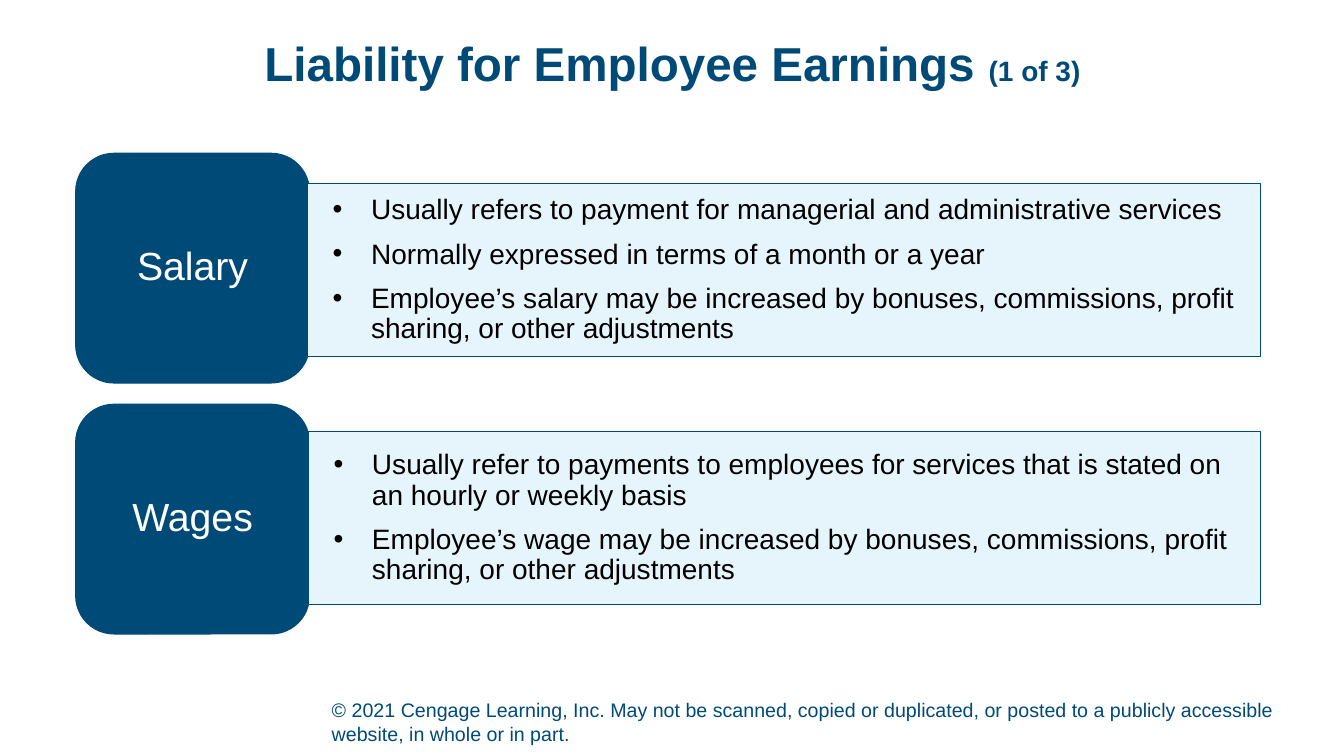
from dataclasses import dataclass

from lxml.etree import SubElement
from pptx import Presentation
from pptx.dml.color import RGBColor
from pptx.enum.shapes import MSO_SHAPE
from pptx.enum.text import MSO_ANCHOR, MSO_AUTO_SIZE, PP_ALIGN
from pptx.oxml.ns import qn
from pptx.shapes.autoshape import Shape
from pptx.slide import Slide
from pptx.text.text import TextFrame, _Paragraph
from pptx.util import Inches, Pt

COLORS = {"navy": "004A78", "pale": "E6F5FB", "white": "FFFFFF", "black": "000000"}
FONT = "Arial"
LABEL_LEFT, LABEL_WIDTH, LABEL_HEIGHT = 0.75, 2.32, 2.28
DETAIL_RIGHT, DETAIL_HEIGHT = 12.5, 1.72


@dataclass(frozen=True)
class PayType:
    name: str
    label_top: float
    detail_left: float
    detail_top: float
    points: tuple[str, ...]


PAY_TYPES = (
    PayType("Salary", 1.52, 3.05, 1.82, (
        "Usually refers to payment for managerial and administrative services",
        "Normally expressed in terms of a month or a year",
        "Employee’s salary may be increased by bonuses, commissions, profit "
        "sharing, or other adjustments",
    )),
    PayType("Wages", 4.01, 3.06, 4.28, (
        "Usually refer to payments to employees for services that is stated on "
        "an hourly or weekly basis",
        "Employee’s wage may be increased by bonuses, commissions, profit "
        "sharing, or other adjustments",
    )),
)


def rgb(color: str) -> RGBColor:
    return RGBColor.from_string(COLORS[color])


def add_run(paragraph: _Paragraph, text: str, size: float, color: str,
            bold: bool = False) -> None:
    run = paragraph.add_run()
    run.text = text
    run.font.name = FONT
    run.font.size = Pt(size)
    run.font.bold = bold
    run.font.color.rgb = rgb(color)


def set_frame(frame: TextFrame, anchor: MSO_ANCHOR, right: float = 0,
              bottom: float = 0) -> None:
    frame.word_wrap = True
    frame.auto_size = MSO_AUTO_SIZE.NONE
    frame.vertical_anchor = anchor
    frame.margin_left = frame.margin_top = 0
    frame.margin_right = Inches(right)
    frame.margin_bottom = Inches(bottom)


def add_panel(slide: Slide, kind: MSO_SHAPE, left: float, top: float,
              width: float, height: float, fill: str) -> Shape:
    panel = slide.shapes.add_shape(
        kind, Inches(left), Inches(top), Inches(width), Inches(height))
    panel.shadow.inherit = False
    panel.fill.solid()
    panel.fill.fore_color.rgb = rgb(fill)
    panel.line.color.rgb = rgb("navy")
    panel.line.width = Pt(0.75)
    return panel


def add_bullet(paragraph: _Paragraph) -> None:
    properties = paragraph._p.get_or_add_pPr()
    properties.set("marL", str(Inches(0.63)))
    properties.set("indent", str(Inches(-0.38)))
    SubElement(properties, qn("a:buFont")).set("typeface", FONT)
    SubElement(properties, qn("a:buChar")).set("char", "•")


def add_pay_type(slide: Slide, pay: PayType) -> None:
    label = add_panel(slide, MSO_SHAPE.ROUNDED_RECTANGLE, LABEL_LEFT,
                      pay.label_top, LABEL_WIDTH, LABEL_HEIGHT, "navy")
    set_frame(label.text_frame, MSO_ANCHOR.MIDDLE)
    name = label.text_frame.paragraphs[0]
    name.alignment = PP_ALIGN.CENTER
    name.line_spacing = 0.9
    add_run(name, pay.name, 28, "white")

    detail = add_panel(slide, MSO_SHAPE.RECTANGLE, pay.detail_left, pay.detail_top,
                       DETAIL_RIGHT - pay.detail_left, DETAIL_HEIGHT, "pale")
    frame = detail.text_frame
    set_frame(frame, MSO_ANCHOR.MIDDLE, right=0.1)
    for index, text in enumerate(pay.points):
        point = frame.add_paragraph() if index else frame.paragraphs[0]
        point.alignment = PP_ALIGN.LEFT
        point.line_spacing = 0.9
        if index:
            point.space_before = Pt(10)
        add_bullet(point)
        add_run(point, text, 20, "black")


def add_title(slide: Slide) -> None:
    title = slide.shapes.title
    title.left, title.top = Inches(0.92), Inches(0.4)
    title.width, title.height = Inches(11.5), Inches(0.74)
    set_frame(title.text_frame, MSO_ANCHOR.TOP)
    heading = title.text_frame.paragraphs[0]
    heading.alignment = PP_ALIGN.CENTER
    heading.line_spacing = 0.9
    add_run(heading, "Liability for Employee Earnings ", 34, "navy", bold=True)
    add_run(heading, "(1 of 3)", 20, "navy", bold=True)


def add_copyright(slide: Slide) -> None:
    notice = slide.shapes.add_textbox(
        Inches(3.29), Inches(6.92), Inches(9.79), Inches(0.52))
    set_frame(notice.text_frame, MSO_ANCHOR.BOTTOM, bottom=0.05)
    add_run(notice.text_frame.paragraphs[0],
            "© 2021 Cengage Learning, Inc. May not be scanned, copied or duplicated, "
            "or posted to a publicly accessible website, in whole or in part.",
            14, "navy")


def main() -> None:
    presentation = Presentation()
    presentation.slide_width = Inches(13.33)
    presentation.slide_height = Inches(7.5)
    slide = presentation.slides.add_slide(
        presentation.slide_layouts.get_by_name("Title Only"))
    add_copyright(slide)
    add_title(slide)
    for pay in PAY_TYPES:
        add_pay_type(slide, pay)
    presentation.save("out.pptx")


if __name__ == "__main__":
    main()
